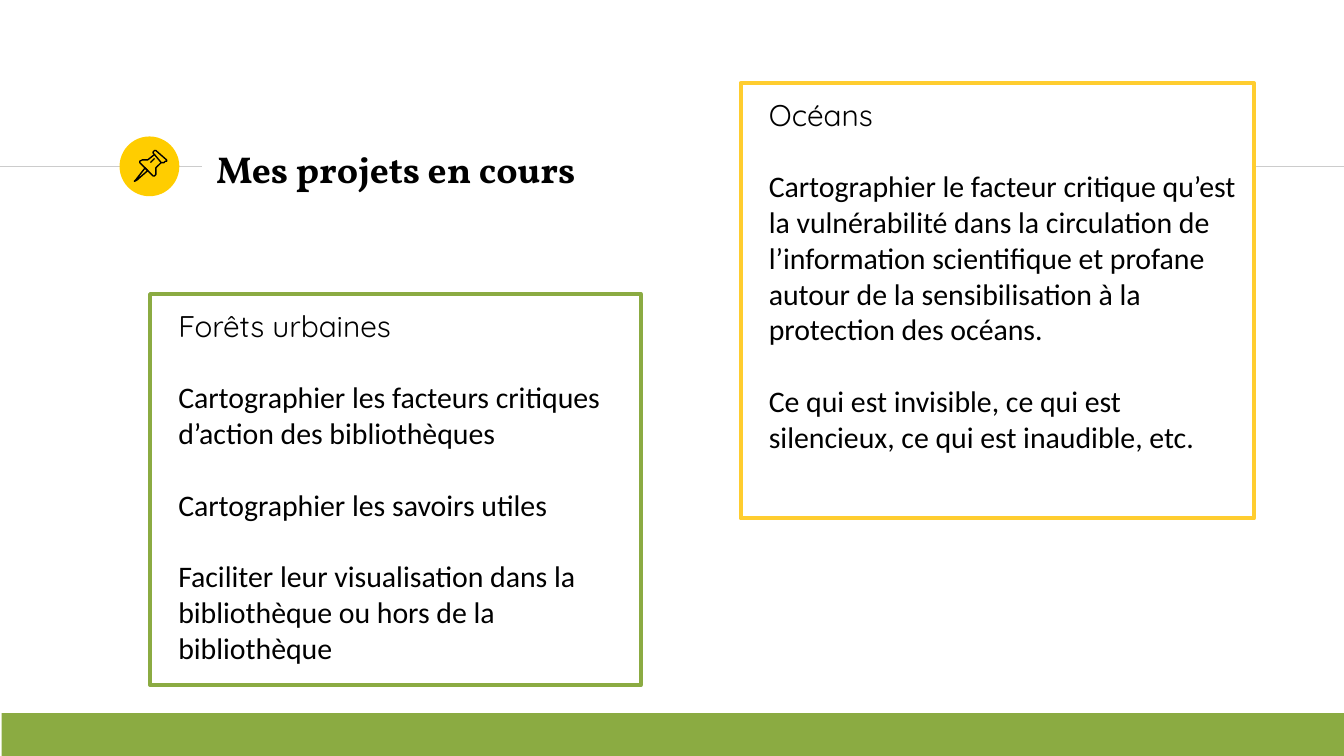
from lxml.etree import SubElement
from pptx import Presentation
from pptx.dml.color import RGBColor
from pptx.enum.shapes import MSO_CONNECTOR, MSO_SHAPE
from pptx.enum.text import MSO_ANCHOR, PP_ALIGN
from pptx.oxml.ns import qn
from pptx.util import Cm, Pt

COLORS = {
    "text": "000000",
    "rule": "CCCCCC",
    "badge": "FFCD00",
    "green": "8BAB42",
    "yellow": "FFCD2F",
    "white": "FFFFFF",
}
HEADING_FONT, SUBTITLE_FONT, BODY_FONT = "Vollkorn", "Quicksand", "Calibri"
LINE_HEIGHT = Pt(19.2)
PIN_UNIT = Cm(2.54) / 100

# Pushpin outlines: points and whether the outline is closed
PIN_OUTLINES = [
    ([(108, 125), (101, 134), (100, 135), (102, 134), (110, 127)], True),
    ([(115, 115), (120, 121), (122, 121), (123, 120), (124, 120), (124, 119),
      (116, 112), (115, 112), (114, 113), (114, 114)], True),
    ([(115, 115), (110, 119), (108, 119), (106, 119), (104, 120), (104, 121),
      (114, 131), (115, 131), (116, 130), (116, 128), (116, 125), (120, 121)], False),
    ([(112, 121), (115, 118)], False),
]


class SlideBuilder:
    def __init__(self, slide):
        self.slide = slide

    def color(self, name):
        return RGBColor.from_string(COLORS[name])

    def style(self, shape, fill=None, line=None, line_width=0.75):
        shape.shadow.inherit = False
        if fill:
            shape.fill.solid()
            shape.fill.fore_color.rgb = self.color(fill)
        else:
            shape.fill.background()
        if line:
            shape.line.color.rgb = self.color(line)
            shape.line.width = Pt(line_width)
            SubElement(shape._element.spPr.find(qn("a:ln")), qn("a:round"))
        else:
            shape.line.fill.background()

    def rule(self, left, right, top):
        connector = self.slide.shapes.add_connector(
            MSO_CONNECTOR.STRAIGHT, Cm(left), Cm(top), Cm(right), Cm(top))
        connector.line.color.rgb = self.color("rule")
        connector.line.width = Pt(0.75)
        SubElement(connector._element.spPr, qn("a:effectLst"))

    def shape(self, kind, left, top, width, height, **style):
        shape = self.slide.shapes.add_shape(
            kind, Cm(left), Cm(top), Cm(width), Cm(height))
        self.style(shape, **style)
        return shape

    def outline(self, points, closed):
        builder = self.slide.shapes.build_freeform(*points[0], scale=PIN_UNIT)
        builder.add_line_segments(points[1:], close=closed)
        self.style(builder.convert_to_shape(), line="text")

    def prepare_frame(self, shape, anchor):
        frame = shape.text_frame
        frame.word_wrap = True
        frame.vertical_anchor = anchor
        frame.margin_left = frame.margin_right = Cm(0.25)
        frame.margin_top = frame.margin_bottom = Cm(0.25)
        return frame

    def format_font(self, paragraph, name, size, bold=False):
        for run in paragraph.runs:
            run.font.name = name
            run.font.size = Pt(size)
            run.font.bold = bold
            run.font.color.rgb = self.color("text")

    def title(self, text, left, top, width, height):
        box = self.slide.shapes.add_textbox(Cm(left), Cm(top), Cm(width), Cm(height))
        frame = self.prepare_frame(box, MSO_ANCHOR.MIDDLE)
        frame.text = text
        self.format_font(frame.paragraphs[0], HEADING_FONT, 20, bold=True)

    def project_card(self, texts, left, top, width, height, line, fill=None):
        card = self.shape(MSO_SHAPE.RECTANGLE, left, top, width, height,
                          fill=fill, line=line, line_width=2.25)
        frame = self.prepare_frame(card, MSO_ANCHOR.TOP)
        frame.text = "\n".join(texts)
        for index, paragraph in enumerate(frame.paragraphs):
            paragraph.alignment = PP_ALIGN.LEFT
            paragraph.line_spacing = LINE_HEIGHT
            paragraph.space_before = LINE_HEIGHT if index else Pt(0)
            properties = paragraph._p.get_or_add_pPr()
            properties.set("marL", str(Cm(0.28)))
            properties.set("indent", "0")
            self.format_font(paragraph, BODY_FONT if index else SUBTITLE_FONT, 16)


def main():
    presentation = Presentation()
    presentation.slide_width, presentation.slide_height = Cm(25.4), Cm(14.29)
    builder = SlideBuilder(presentation.slides.add_slide(presentation.slide_layouts[6]))

    # Title line with its badge
    builder.rule(0, 3.81, 3.15)
    builder.shape(MSO_SHAPE.OVAL, 2.26, 2.58, 1.13, 1.13, fill="badge")
    builder.rule(14.63, 25.4, 3.15)
    builder.title("Mes projets en cours", 3.84, 2.57, 10.77, 1.22)
    for points, closed in PIN_OUTLINES:
        builder.outline(points, closed)

    # Bottom band
    builder.shape(MSO_SHAPE.RECTANGLE, 0.03, 13.48, 25.37, 0.81, fill="green")

    # Project cards
    builder.project_card([
        "Forêts urbaines",
        "Cartographier les facteurs critiques d’action des bibliothèques",
        "Cartographier les savoirs utiles",
        "Faciliter leur visualisation dans la bibliothèque ou hors de la bibliothèque",
    ], 2.84, 5.56, 9.27, 7.39, line="green")
    builder.project_card([
        "Océans",
        "Cartographier le facteur critique qu’est la vulnérabilité dans la circulation "
        "de l’information scientifique et profane autour de la sensibilisation à la "
        "protection des océans.",
        "Ce qui est invisible, ce qui est silencieux, ce qui est inaudible, etc.",
    ], 14, 1.57, 9.7, 8.23, line="yellow", fill="white")

    presentation.save("out.pptx")


if __name__ == "__main__":
    main()
